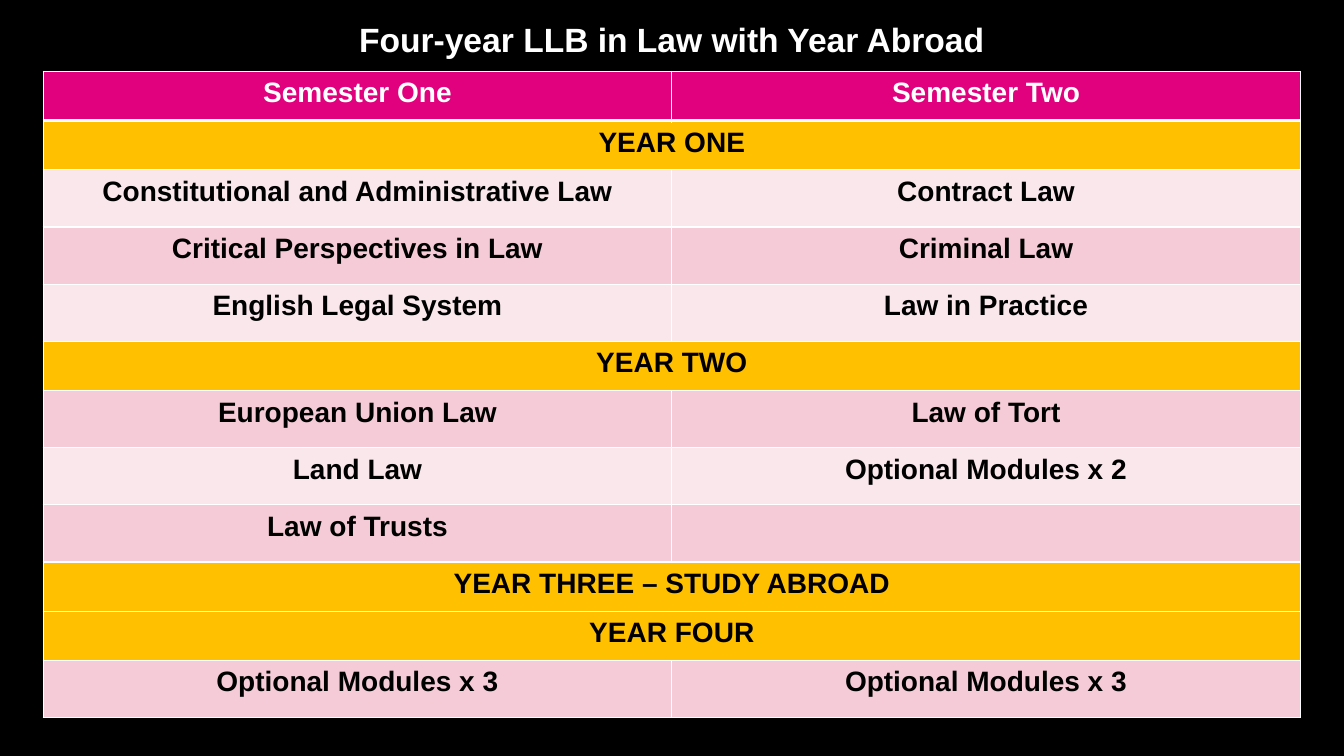
from lxml.etree import SubElement
from pptx import Presentation
from pptx.dml.color import RGBColor
from pptx.enum.text import MSO_ANCHOR as Anchor, PP_ALIGN as Align
from pptx.oxml.ns import qn
from pptx.util import Cm, Pt

# Content
TITLE = "Four-year LLB in Law with Year Abroad"
SEMESTERS = ("Semester One", "Semester Two")
# year heading, shade of its first row (0 pale, 1 deep), modules per semester
YEARS = [
    ("YEAR ONE", 0, [
        ("Constitutional and Administrative Law", "Contract Law"),
        ("Critical Perspectives in Law", "Criminal Law"),
        ("English Legal System", "Law in Practice"),
    ]),
    ("YEAR TWO", 1, [
        ("European Union Law", "Law of Tort"),
        ("Land Law", "Optional Modules x 2"),
        ("Law of Trusts", ""),
    ]),
    ("YEAR THREE – STUDY ABROAD", 0, []),
    ("YEAR FOUR", 1, [("Optional Modules x 3", "Optional Modules x 3")]),
]

# Format
BLACK, WHITE, PINK, GOLD = "000000", "FFFFFF", "E1007D", "FFC000"
SHADES = ("F9E7EC", "F4CBD7")
LEFT, WIDTH = Cm(1.09), Cm(31.68)
HEADING_HEIGHT, MODULE_HEIGHT = Cm(1.24), Cm(1.44)
THIN, THICK = Pt(1), Pt(3)
CELL_FORMAT = {"margin_left": Cm(0.2), "margin_right": Cm(0.2),
               "margin_top": Cm(0.1), "margin_bottom": Cm(0.1)}
CELL_PARAGRAPH = {"alignment": Align.CENTER, "line_spacing": 1.07, "space_after": Pt(8)}
TITLE_FORMAT = {"margin_left": 0, "margin_right": 0, "margin_top": 0,
                "margin_bottom": 0, "word_wrap": True,
                "vertical_anchor": Anchor.MIDDLE}


def apply(target, values):
    for name, value in values.items():
        setattr(target, name, value)


def paint(fill, color):
    fill.solid()
    fill.fore_color.rgb = RGBColor.from_string(color)


def write(paragraph, text, size, color, layout):
    apply(paragraph, layout)
    if text:
        run = paragraph.add_run()
        run.text = text
        apply(run.font, {"name": "Arial", "size": Pt(size), "bold": True})
        run.font.color.rgb = RGBColor.from_string(color)


def add_borders(cell, top, bottom):
    sides = {"a:lnL": THIN, "a:lnR": THIN, "a:lnT": top, "a:lnB": bottom}
    for side, weight in sides.items():
        line = SubElement(cell._tc.get_or_add_tcPr(), qn(side), w=str(weight))
        solid = SubElement(line, qn("a:solidFill"))
        SubElement(solid, qn("a:srgbClr"), val=WHITE)


# Rows: texts, fill, text colour, height
rows = [(SEMESTERS, PINK, WHITE, HEADING_HEIGHT)]
for year, first_shade, modules in YEARS:
    rows.append(((year,), GOLD, BLACK, HEADING_HEIGHT))
    for i, pair in enumerate(modules):
        rows.append((pair, SHADES[(first_shade + i) % 2], BLACK, MODULE_HEIGHT))

# Slide
prs = Presentation()
prs.slide_width, prs.slide_height = Cm(33.87), Cm(19.05)
slide = prs.slides.add_slide(prs.slide_layouts[6])
paint(slide.background.fill, BLACK)

# Title
title = slide.shapes.add_textbox(LEFT, Cm(0.3), WIDTH, Cm(1.35)).text_frame
apply(title, TITLE_FORMAT)
write(title.paragraphs[0], TITLE, 24, WHITE, {"alignment": Align.CENTER})

# Course table
total_height = sum(height for *_, height in rows)
course = slide.shapes.add_table(len(rows), len(SEMESTERS), LEFT, Cm(1.8),
                                WIDTH, total_height).table
for r, (texts, fill, color, height) in enumerate(rows):
    course.rows[r].height = height
    cells = list(course.rows[r].cells)
    for cell in cells:
        apply(cell, CELL_FORMAT)
        add_borders(cell, THICK if r == 1 else THIN, THICK if r == 0 else THIN)
        paint(cell.fill, fill)
    if len(texts) == 1:
        cells[0].merge(cells[-1])
    for cell, text in zip(cells, texts):
        write(cell.text_frame.paragraphs[0], text, 20, color, CELL_PARAGRAPH)

prs.save("out.pptx")
